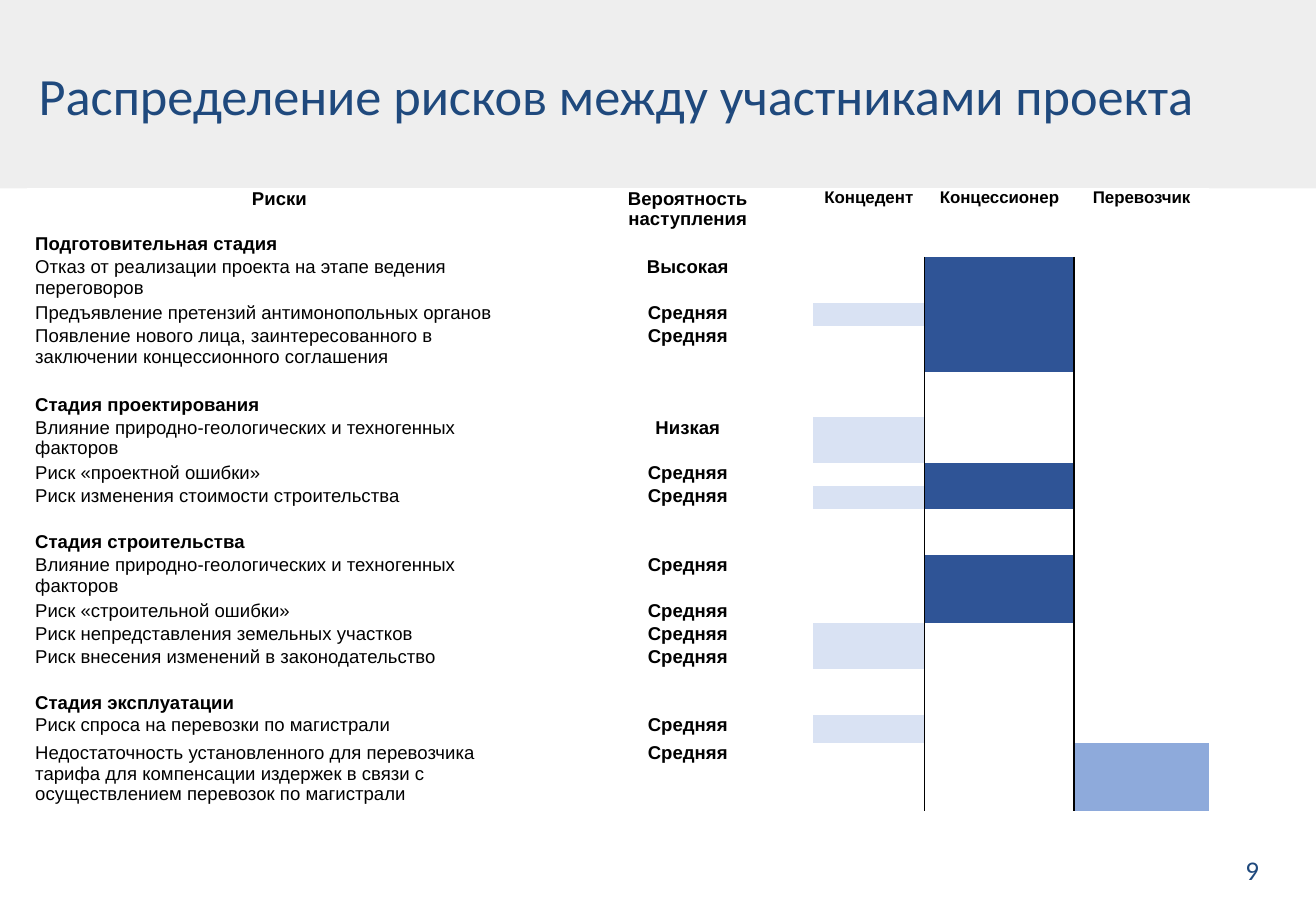
from lxml import etree
from pptx import Presentation
from pptx import util as u
from pptx.dml.color import RGBColor
from pptx.enum import shapes, text
from pptx.oxml.ns import qn

W, H = 10.83, 7.5
COLORS = {"band": "EEEEEE", "paper": "FFFFFF", "heading": "1F497D", "ink": "000000",
          "grantor": "D9E2F3", "concessionaire": "2F5496", "railway": "8EAADB"}
HOLDERS = {3: "grantor", 4: "concessionaire", 5: "railway"}
COLUMNS = [4.16, 0.25, 2.06, 0.92, 1.23, 1.11]
HEADERS = ["Риски", "", "Вероятность наступления", "Концедент", "Концессионер", "Перевозчик"]
NO_STYLE = "{2D5ABB26-0587-4C30-8999-92F81FD0307C}"
MEDIUM = "Средняя"
BLANK = (1, "", "", ())
NATURE = "Влияние природно-геологических и техногенных факторов"
# Each row: height in text lines, risk or stage, probability, columns of the holders
ROWS = [
    (1, "Подготовительная стадия", "", ()),
    (2, "Отказ от реализации проекта на этапе ведения переговоров", "Высокая", (4,)),
    (1, "Предъявление претензий антимонопольных органов", MEDIUM, (3, 4)),
    (2, "Появление нового лица, заинтересованного в заключении концессионного соглашения",
     MEDIUM, (4,)),
    BLANK,
    (1, "Стадия проектирования", "", ()),
    (2, NATURE, "Низкая", (3,)),
    (1, "Риск «проектной ошибки»", MEDIUM, (4,)),
    (1, "Риск изменения стоимости строительства", MEDIUM, (3, 4)),
    BLANK,
    (1, "Стадия строительства", "", ()),
    (2, NATURE, MEDIUM, (4,)),
    (1, "Риск «строительной ошибки»", MEDIUM, (4,)),
    (1, "Риск непредставления земельных участков", MEDIUM, (3,)),
    (1, "Риск внесения изменений в законодательство", MEDIUM, (3,)),
    BLANK,
    (1, "Стадия эксплуатации", "", ()),
    (1.2, "Риск спроса на перевозки по магистрали", MEDIUM, (3,)),
    (3, "Недостаточность установленного для перевозчика тарифа для компенсации издержек "
        "в связи с осуществлением перевозок по магистрали", MEDIUM, (5,)),
]


def paint(fill, name):
    """Give a fill one solid colour from the palette."""
    fill.solid()
    fill.fore_color.rgb = RGBColor.from_string(COLORS[name])


def write(tf, words, size, font, color, align, bold=False):
    """Put one formatted paragraph into a text frame."""
    tf.text = words
    p = tf.paragraphs[0]
    p.alignment = align
    for r in p.runs:
        r.font.size, r.font.name, r.font.bold = u.Pt(size), font, bold
        r.font.color.rgb = RGBColor.from_string(COLORS[color])
    if not words:
        etree.SubElement(p._p, qn("a:endParaRPr"), sz=str(size * 100))


def rule_cell(cell, sides):
    """Draw black vertical rules on the listed sides of a cell."""
    tc_pr = cell._tc.get_or_add_tcPr()
    for place, side in enumerate(sides):
        ln = etree.Element(qn(f"a:ln{side}"), w=str(u.Pt(1)))
        fill = etree.SubElement(ln, qn("a:solidFill"))
        etree.SubElement(fill, qn("a:srgbClr"), val=COLORS["ink"])
        tc_pr.insert(place, ln)


def add_label(slide, box, words, size, align, anchor):
    """Place a heading-coloured line of text in the box."""
    tf = slide.shapes.add_textbox(*map(u.Inches, box)).text_frame
    tf.word_wrap = True
    tf.vertical_anchor = anchor
    write(tf, words, size, "Calibri", "heading", align)


def add_background(slide, box):
    """Colour the page and lay the white panel over the box."""
    paint(slide.background.fill, "band")
    sp = slide.shapes.add_shape(shapes.MSO_SHAPE.RECTANGLE, *map(u.Inches, box))
    sp.shadow.inherit = False
    sp.line.fill.background()
    paint(sp.fill, "paper")


def add_risk_table(slide, box):
    """Fill the box with the table of risks and their holders."""
    rows = [(2, None, None, ())] + ROWS
    table = slide.shapes.add_table(len(rows), len(COLUMNS), *map(u.Inches, box)).table
    table.first_row = table.horz_banding = False
    table._tbl.tblPr.find(qn("a:tableStyleId")).text = NO_STYLE
    for column, share in zip(table.columns, COLUMNS):
        column.width = u.Inches(box[2] * share / sum(COLUMNS))
    line = box[3] / sum(row[0] for row in rows)
    for i, (lines, risk, chance, holders) in enumerate(rows):
        table.rows[i].height = u.Inches(line * lines)
        words = [risk, "", chance, "", "", ""] if i else HEADERS
        for j, word in enumerate(words):
            cell = table.cell(i, j)
            cell.margin_left = cell.margin_right = u.Inches(0.07)
            cell.margin_top = cell.margin_bottom = 0
            centred = i == 0 or j > 0
            align = text.PP_ALIGN.CENTER if centred else text.PP_ALIGN.LEFT
            size = 10 if i == 0 and j > 2 else 11
            write(cell.text_frame, word, size, "Arial", "ink", align, centred or not chance)
            paint(cell.fill, HOLDERS[j] if j in holders else "paper")
            if i > 1:
                rule_cell(cell, {3: "R", 4: "LR", 5: "L"}.get(j, ""))


def build_slide(prs):
    """Build the slide on risk allocation."""
    slide = prs.slides.add_slide(prs.slide_layouts[6])
    top, left = 1.55, 0.22
    add_background(slide, (0, top, W, H - top))
    add_label(slide, (left, 0.36, 10.08, 0.73), "Распределение рисков между участниками проекта",
              31, text.PP_ALIGN.LEFT, text.MSO_ANCHOR.BOTTOM)
    add_label(slide, (7.93, 6.98, 2.53, 0.52), "9", 16, text.PP_ALIGN.RIGHT, text.MSO_ANCHOR.TOP)
    add_risk_table(slide, (left, top, sum(COLUMNS), 5.13))


def main():
    """Create and save the presentation."""
    prs = Presentation()
    prs.slide_width, prs.slide_height = u.Inches(W), u.Inches(H)
    build_slide(prs)
    prs.save("out.pptx")


if __name__ == "__main__":
    main()
